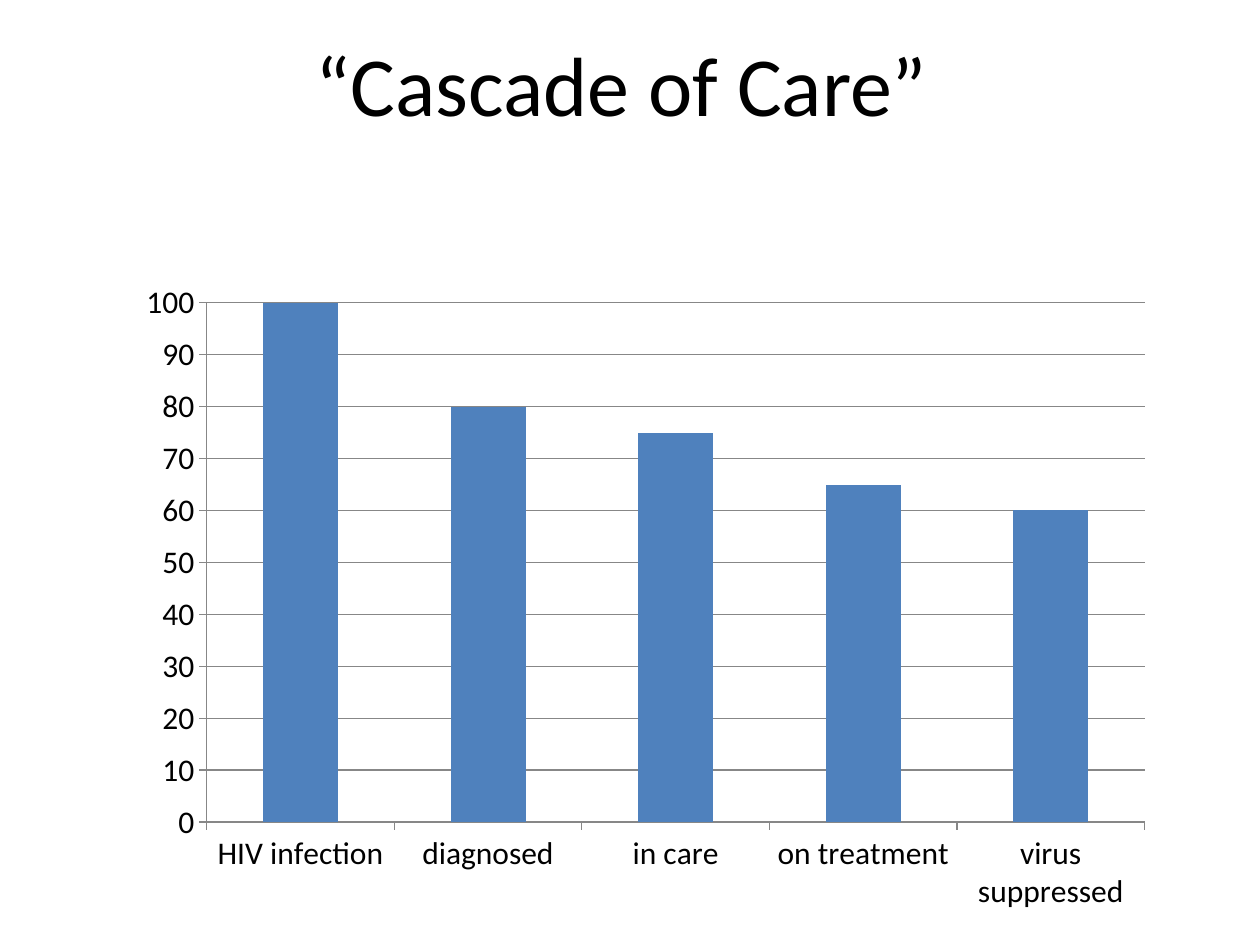
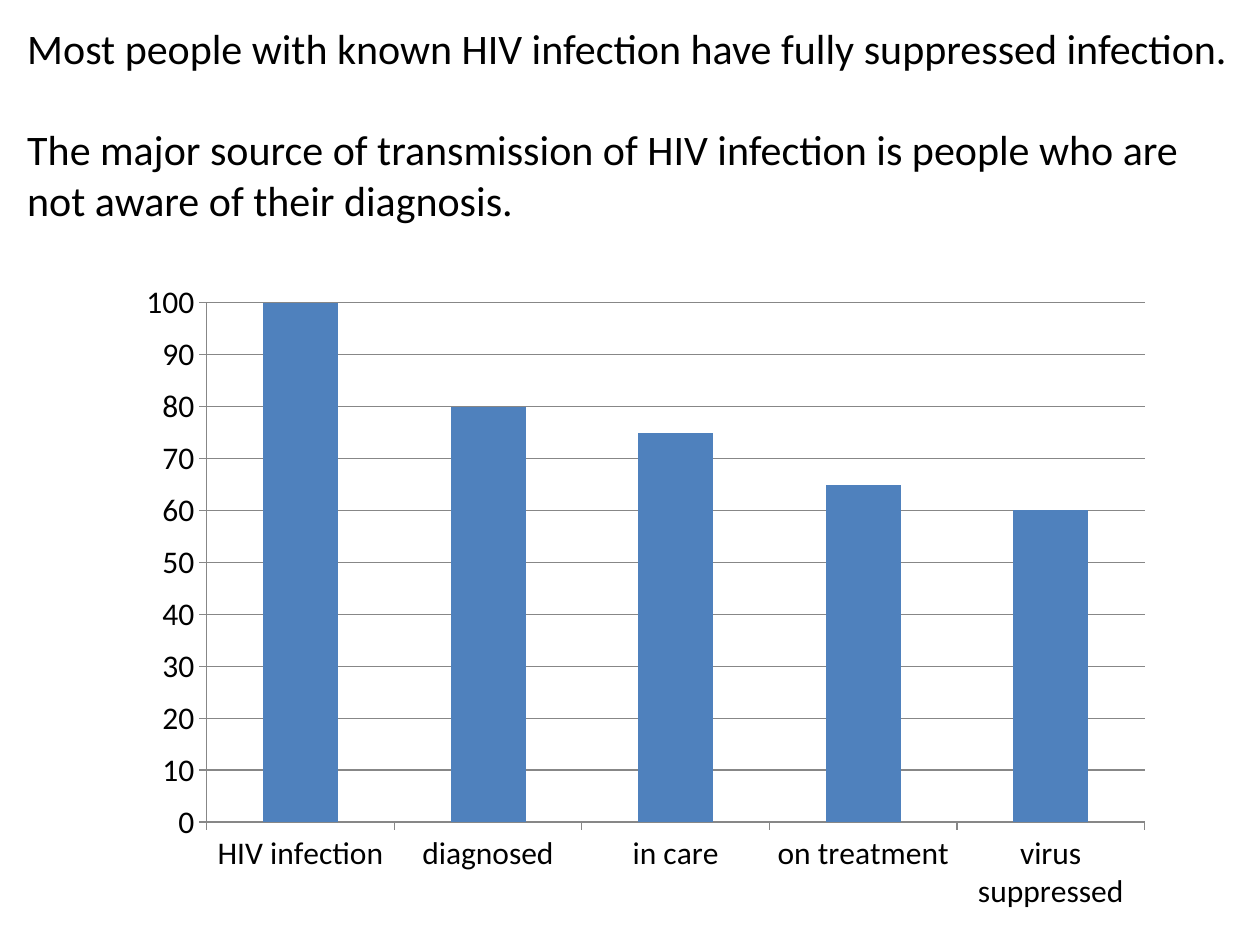
"""Builds two slides on the HIV cascade of care, each with the same column chart."""
from lxml.etree import SubElement
from pptx import Presentation
from pptx.chart.data import CategoryChartData
from pptx.dml.color import RGBColor
from pptx.enum.chart import XL_CHART_TYPE as CHART, XL_TICK_MARK as TICK
from pptx.enum.text import MSO_ANCHOR as ANCHOR, PP_ALIGN as ALIGN
from pptx.oxml.ns import qn
from pptx.util import Pt

FONT = "Calibri"
BLACK = RGBColor(0x00, 0x00, 0x00)
BLUE = RGBColor(0x4F, 0x81, 0xBD)
GREY = RGBColor(0x87, 0x87, 0x87)
CASCADE = {"HIV infection": 100, "diagnosed": 80, "in care": 75,
           "on treatment": 65, "virus suppressed": 60}
PLOT = {"x": 0.08, "y": 0.03, "w": 0.9, "h": 0.81}


def add_text(p, text, size, before=0):
    p.alignment = ALIGN.LEFT
    p.space_before = Pt(before)
    r = p.add_run()
    r.text = text
    r.font.name = FONT
    r.font.size = Pt(size)
    r.font.color.rgb = BLACK


def add_cascade_chart(s):
    data = CategoryChartData()
    data.categories = list(CASCADE)
    data.add_series("Series 1", list(CASCADE.values()))
    chart = s.shapes.add_chart(CHART.COLUMN_CLUSTERED, Pt(70.5), Pt(162),
                               Pt(595.5), Pt(366.5), data).chart
    chart.has_legend = False
    chart.has_title = False
    chart.font.name = FONT
    chart.font.size = Pt(18)
    chart.font.color.rgb = BLACK

    plot = chart.plots[0]
    plot.gap_width = 150
    plot.vary_by_categories = False
    fill = plot.series[0].format.fill
    fill.solid()
    fill.fore_color.rgb = BLUE

    values = chart.value_axis
    values.minimum_scale = 0
    values.maximum_scale = 100
    values.major_unit = 10
    values.has_major_gridlines = True
    for axis in (chart.category_axis, values):
        axis.major_tick_mark = TICK.OUTSIDE
        axis.minor_tick_mark = TICK.NONE
    for part in (chart.category_axis, values, values.major_gridlines):
        part.format.line.color.rgb = GREY
        part.format.line.width = Pt(0.75)

    area = plot._element.getparent()
    for old in area.findall(qn("c:layout")):
        area.remove(old)
    layout = SubElement(area, qn("c:layout"))
    area.insert(0, layout)
    manual = SubElement(layout, qn("c:manualLayout"))
    settings = {"layoutTarget": "inner", "xMode": "edge", "yMode": "edge", **PLOT}
    for name, value in settings.items():
        SubElement(manual, qn(f"c:{name}")).set("val", str(value))


prs = Presentation()
prs.slide_width = Pt(720)
prs.slide_height = Pt(540)
title_only, blank = prs.slide_layouts[5], prs.slide_layouts[6]

s = prs.slides.add_slide(title_only)
title = s.shapes.title
title.left, title.top, title.width, title.height = Pt(173), Pt(15), Pt(385), Pt(65.5)
tf = title.text_frame
tf.vertical_anchor = ANCHOR.TOP
add_text(tf.paragraphs[0], "“Cascade of Care”", 48)
add_cascade_chart(s)

s = prs.slides.add_slide(blank)
add_cascade_chart(s)
tf = s.shapes.add_textbox(Pt(8.5), Pt(9.5), Pt(703), Pt(124)).text_frame
tf.word_wrap = True
add_text(tf.paragraphs[0],
         "Most people with known HIV infection have fully suppressed infection.", 24)
add_text(tf.add_paragraph(),
         "The major source of transmission of HIV infection is people who are "
         "not aware of their diagnosis.", 24, before=29)

prs.save("out.pptx")
